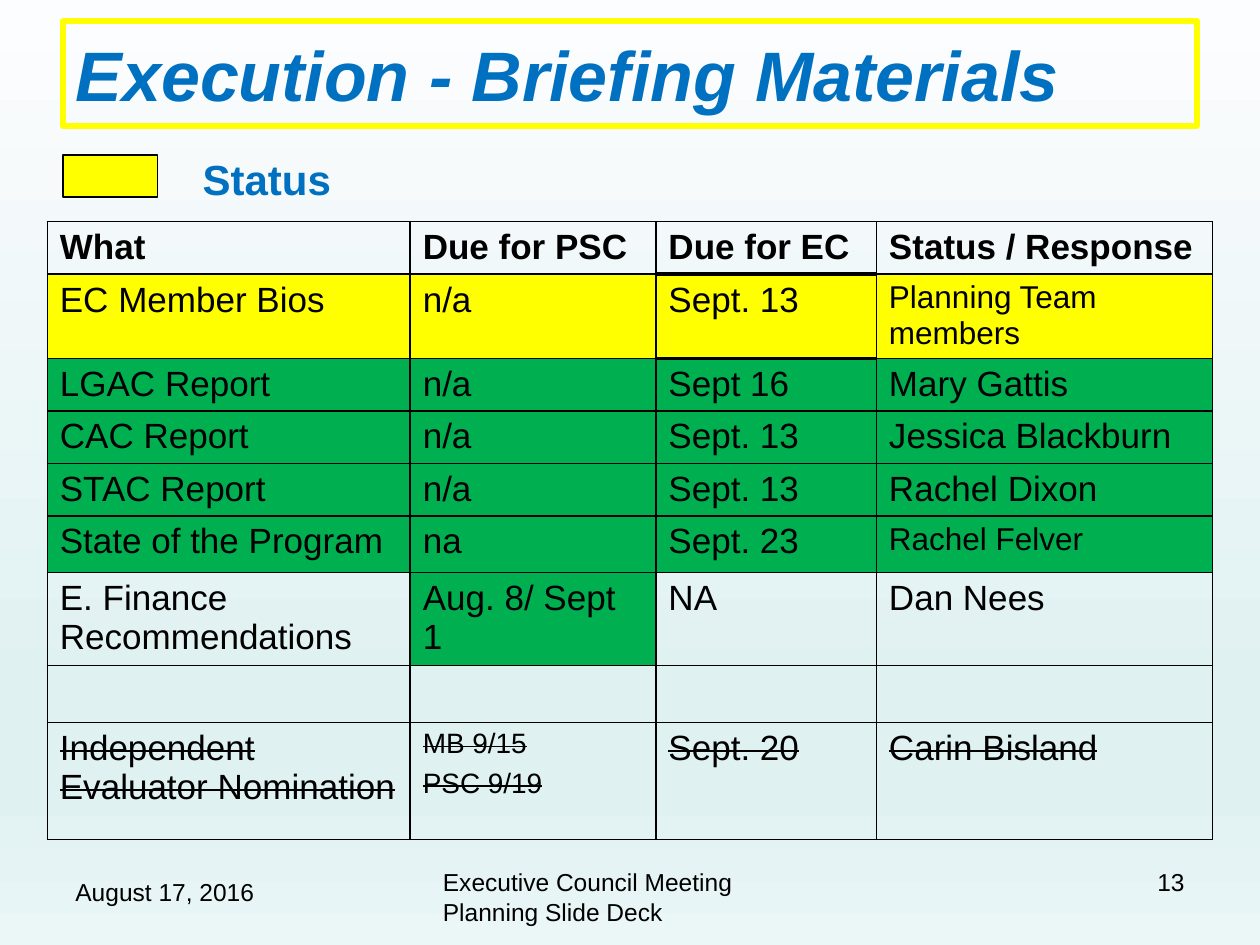
from lxml import etree
from pptx import Presentation
from pptx.dml.color import RGBColor
from pptx.enum import shapes, text
from pptx.oxml import parse_xml
from pptx.oxml.ns import nsdecls, qn
from pptx.util import Pt

BLUE = RGBColor(0x00, 0x70, 0xC0)
YELLOW = RGBColor(0xFF, 0xFF, 0x00)
GREEN = RGBColor(0x00, 0xB0, 0x50)
BLACK = RGBColor(0x00, 0x00, 0x00)
BACKGROUND_STOPS = [(0, "FCFDFE"), (74, "E0F1F2"), (83, "E0F1F2"), (100, "EBF6F7")]


def format_text(paragraph, size, color=BLACK, bold=False, italic=False):
    for run in paragraph.runs:
        run.font.name = "Arial"
        run.font.size = Pt(size)
        run.font.color.rgb = color
        run.font.bold = bold
        run.font.italic = italic


def set_borders(cell, widths):
    """Draw black borders; widths are points for left, right, top, bottom."""
    properties = cell._tc.get_or_add_tcPr()
    for index, (side, width) in enumerate(zip("LRTB", widths)):
        properties.insert(index, parse_xml(
            f'<a:ln{side} {nsdecls("a")} w="{Pt(width)}"><a:solidFill>'
            f'<a:srgbClr val="{BLACK}"/></a:solidFill></a:ln{side}>'))


presentation = Presentation()
presentation.slide_width = Pt(720)
presentation.slide_height = Pt(540)
slide = presentation.slides.add_slide(presentation.slide_layouts[5])

# Background gradient, top to bottom
background = slide.background.fill
background.gradient()
gradient = slide.background._cSld.find(".//" + qn("a:gradFill"))
stop_list = gradient.find(qn("a:gsLst"))
for stop in list(stop_list):
    stop_list.remove(stop)
for position, color in BACKGROUND_STOPS:
    stop = etree.SubElement(stop_list, qn("a:gs"), pos=str(position * 1000))
    etree.SubElement(stop, qn("a:srgbClr"), val=color)
gradient.find(qn("a:lin")).set("ang", str(90 * 60000))

# Title
title = slide.shapes.title
title.left, title.top, title.width, title.height = Pt(36), Pt(12), Pt(648), Pt(60)
title.line.color.rgb = YELLOW
title.line.width = Pt(3)
title.text_frame.text = "Execution - Briefing Materials"
title.text_frame.vertical_anchor = text.MSO_ANCHOR.MIDDLE
title.text_frame.paragraphs[0].alignment = text.PP_ALIGN.LEFT
format_text(title.text_frame.paragraphs[0], 40, BLUE, bold=True, italic=True)

# Status table: row height, row fill, cell texts
rows = [
    (30, None, ["What", "Due for PSC", "Due for EC", "Status / Response"]),
    (48.2, YELLOW, ["EC Member Bios", "n/a", "Sept. 13", "Planning Team members"]),
    (30, GREEN, ["LGAC Report", "n/a", "Sept 16", "Mary Gattis"]),
    (30, GREEN, ["CAC Report", "n/a", "Sept. 13", "Jessica Blackburn"]),
    (30, GREEN, ["STAC Report", "n/a", "Sept. 13", "Rachel Dixon"]),
    (32.4, GREEN, ["State of the Program", "na", "Sept. 23", "Rachel Felver"]),
    (53.2, None, ["E. Finance Recommendations", "Aug. 8/ Sept 1", "NA", "Dan Nees"]),
    (32.4, None, ["", "", "", ""]),
    (67, None, ["Independent Evaluator Nomination", "MB 9/15\nPSC 9/19",
                "Sept. 20", "Carin Bisland"]),
]
column_widths = [207.4, 140.4, 126, 192.2]
small_text = {(1, 3): 18, (5, 3): 18, (8, 1): 16}
special_fills = {(6, 1): GREEN}
special_borders = {(0, 2): (1, 1, 1, 2), (1, 2): (1, 1, 2, 2), (2, 2): (1, 1, 2, 1)}
last_row = len(rows) - 1

table = slide.shapes.add_table(len(rows), len(column_widths), Pt(27), Pt(126.6),
                               Pt(sum(column_widths)),
                               Pt(sum(row[0] for row in rows))).table
table.first_row = False
table.horz_banding = False
for column, width in zip(table.columns, column_widths):
    column.width = Pt(width)
for r, (height, row_fill, texts) in enumerate(rows):
    table.rows[r].height = Pt(height)
    for c, cell_text in enumerate(texts):
        cell = table.cell(r, c)
        cell.text_frame.text = cell_text
        fill = special_fills.get((r, c), row_fill)
        if fill is None:
            cell.fill.background()
        else:
            cell.fill.solid()
            cell.fill.fore_color.rgb = fill
        set_borders(cell, special_borders.get((r, c), (1, 1, 1, 1)))
        for paragraph in cell.text_frame.paragraphs:
            format_text(paragraph, small_text.get((r, c), 20), bold=r == 0)
            if r == last_row:
                if c == 1:
                    paragraph.space_before = Pt(4.8)
                for run in paragraph.runs:
                    run._r.get_or_add_rPr().set("strike", "sngStrike")

# Legend swatch
swatch = slide.shapes.add_shape(shapes.MSO_SHAPE.RECTANGLE,
                                Pt(36), Pt(88.6), Pt(54), Pt(24))
swatch.shadow.inherit = False
swatch.fill.solid()
swatch.fill.fore_color.rgb = YELLOW
swatch.line.color.rgb = BLACK
swatch.line.width = Pt(0.75)

# Legend label and footer: text, left, top, width, height, size, colour, bold, alignment
labels = [
    ("Status", 108.7, 84.2, 138, 36, 24, BLUE, True, text.PP_ALIGN.LEFT),
    ("August 17, 2016", 36, 497.5, 168, 37.5, 14, BLACK, False, text.PP_ALIGN.LEFT),
    ("Executive Council Meeting Planning Slide Deck", 246, 492, 228, 37.5, 14, BLACK,
     False, text.PP_ALIGN.LEFT),
    ("13", 516, 492, 168, 37.5, 14, BLACK, False, text.PP_ALIGN.RIGHT),
]
for label, left, top, width, height, size, color, bold, alignment in labels:
    box = slide.shapes.add_textbox(Pt(left), Pt(top), Pt(width), Pt(height))
    box.text_frame.word_wrap = True
    box.text_frame.text = label
    paragraph = box.text_frame.paragraphs[0]
    paragraph.alignment = alignment
    format_text(paragraph, size, color, bold)

presentation.save("out.pptx")
